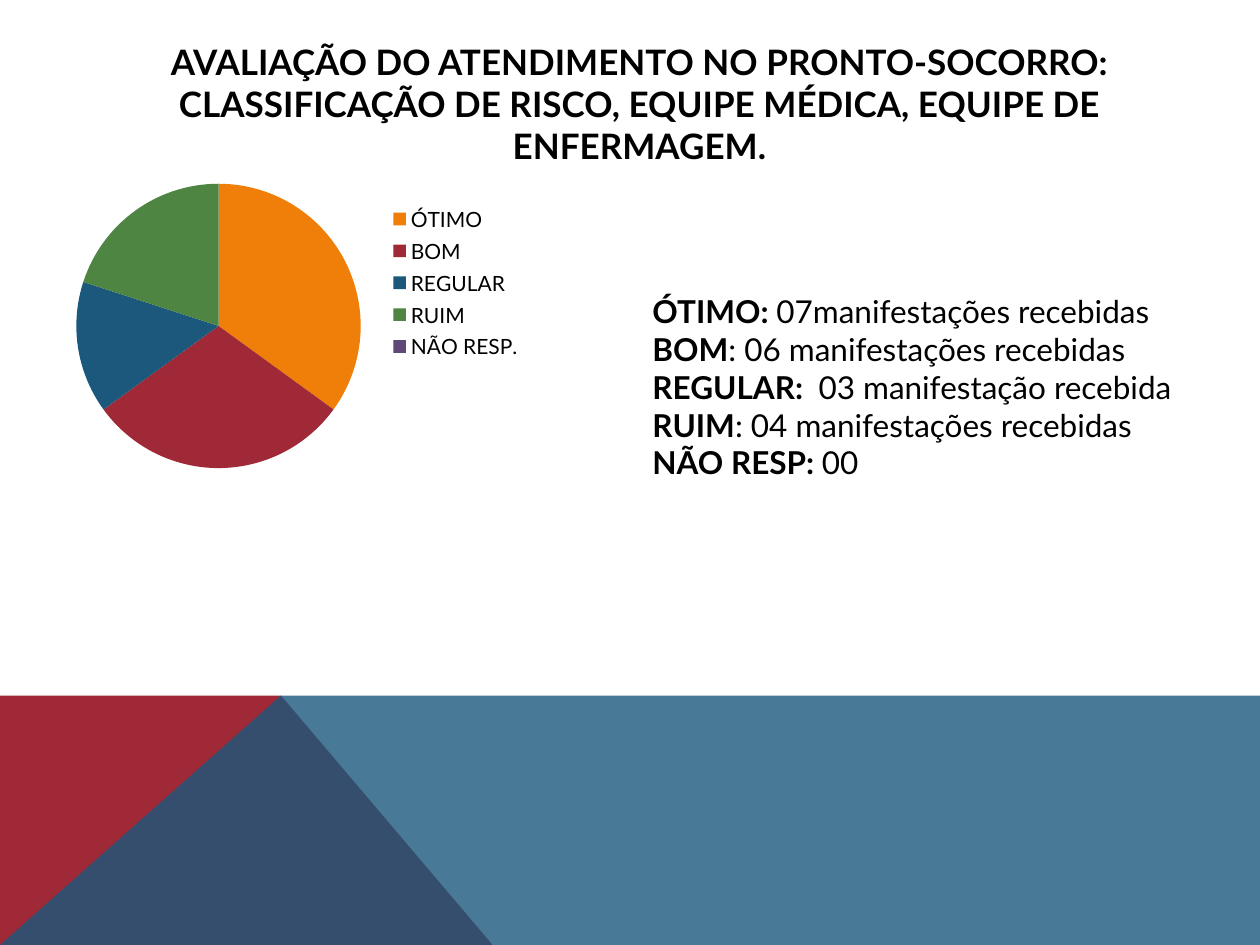
from lxml.etree import SubElement
from pptx import Presentation
from pptx.chart.data import CategoryChartData
from pptx.dml.color import RGBColor
from pptx.enum.chart import XL_CHART_TYPE, XL_LEGEND_POSITION
from pptx.enum.text import MSO_ANCHOR, PP_ALIGN
from pptx.oxml.ns import qn
from pptx.util import Inches, Pt

FONT = "Lato"
BLACK = RGBColor(0x00, 0x00, 0x00)
WHITE = RGBColor(0xFF, 0xFF, 0xFF)
ORANGE = RGBColor(0xF0, 0x7F, 0x09)
RED = RGBColor(0x9F, 0x29, 0x36)
BLUE = RGBColor(0x1B, 0x58, 0x7C)
GREEN = RGBColor(0x4E, 0x85, 0x42)
PURPLE = RGBColor(0x60, 0x48, 0x78)

TITLE = ("AVALIAÇÃO DO ATENDIMENTO NO PRONTO-SOCORRO: CLASSIFICAÇÃO DE RISCO, "
         "EQUIPE MÉDICA, EQUIPE DE ENFERMAGEM.")
RATINGS = [
    ("ÓTIMO", 35, ORANGE),
    ("BOM", 30, RED),
    ("REGULAR", 15, BLUE),
    ("RUIM", 20, GREEN),
    ("NÃO RESP.", 0, PURPLE),
]
COUNTS = [
    ("ÓTIMO: ", "07manifestações recebidas"),
    ("BOM", ": 06 manifestações recebidas"),
    ("REGULAR:  ", "03 manifestação recebida"),
    ("RUIM", ": 04 manifestações recebidas"),
    ("NÃO RESP: ", "00"),
]


def style_font(font, size, bold=False):
    font.name = FONT
    font.size = Pt(size)
    font.bold = bold
    font.color.rgb = BLACK


def add_polygon(s, points, color, opacity=100):
    corners = [(Inches(x), Inches(y)) for x, y in points]
    builder = s.shapes.build_freeform(*corners[0])
    builder.add_line_segments(corners[1:], close=True)
    sp = builder.convert_to_shape()
    sp.shadow.inherit = False
    sp.line.fill.background()
    sp.fill.solid()
    sp.fill.fore_color.rgb = color
    if opacity < 100:
        srgb = sp.fill._xPr.find(".//" + qn("a:srgbClr"))
        SubElement(srgb, qn("a:alpha"), val=str(opacity * 1000))


def add_footer(s, left, top, width, height):
    right, bottom, peak = left + width, top + height, left + 2.23
    add_polygon(s, [(left, bottom), (left, top), (peak, top),
                    (left + 3.91, bottom)], RED)
    add_polygon(s, [(left, bottom), (peak, top), (right, top),
                    (right, bottom)], BLUE, 80)


def add_text_box(s, left, top, width, height):
    box = s.shapes.add_textbox(Inches(left), Inches(top), Inches(width), Inches(height))
    tf = box.text_frame
    tf.word_wrap = True
    return tf


def add_title(s, left, top, width, height):
    tf = add_text_box(s, left, top, width, height)
    tf.vertical_anchor = MSO_ANCHOR.MIDDLE
    tf.text = TITLE
    p = tf.paragraphs[0]
    p.alignment = PP_ALIGN.CENTER
    style_font(p.runs[0].font, 20, True)


def place_part(part, **position):
    layout = part.find(qn("c:layout"))
    if layout is None:
        layout = part.makeelement(qn("c:layout"), {})
        part.find(qn("c:overlay")).addprevious(layout)
    manual = SubElement(layout, qn("c:manualLayout"))
    for tag, value in position.items():
        SubElement(manual, qn("c:" + tag), val=str(value))


def add_pie(s, left, top, width, height):
    data = CategoryChartData()
    data.categories = [name for name, _, _ in RATINGS]
    data.add_series("Series 1", [value for _, value, _ in RATINGS])
    chart = s.shapes.add_chart(XL_CHART_TYPE.PIE, Inches(left), Inches(top),
                               Inches(width), Inches(height), data).chart
    style_font(chart.font, 18)
    chart.has_title = False
    chart.has_legend = True
    legend = chart.legend
    legend.position = XL_LEGEND_POSITION.RIGHT
    legend.include_in_layout = True
    style_font(legend.font, 12)
    plot = chart.plots[0]
    plot.vary_by_categories = True
    for i, (_, _, color) in enumerate(RATINGS):
        fill = plot.series[0].points[i].format.fill
        fill.solid()
        fill.fore_color.rgb = color
    area = chart._chartSpace.chart.plotArea
    if area.find(qn("c:layout")) is None:
        area.insert(0, area.makeelement(qn("c:layout"), {}))
    place_part(area, layoutTarget="inner", xMode="edge", yMode="edge",
               x=0.09, y=0.05, w=0.54, h=0.89)
    place_part(legend._element, xMode="edge", yMode="edge",
               x=0.64, y=0.1, w=0.34, h=0.52)


def add_counts(s, left, top, width, height):
    tf = add_text_box(s, left, top, width, height)
    for i, (label, count) in enumerate(COUNTS):
        p = tf.paragraphs[0] if i == 0 else tf.add_paragraph()
        for text, bold in ((label, True), (count, False)):
            r = p.add_run()
            r.text = text
            style_font(r.font, 18, bold)


def main():
    prs = Presentation()
    prs.slide_width, prs.slide_height = Inches(10), Inches(7.5)
    s = prs.slides.add_slide(prs.slide_layouts[6])
    s.background.fill.solid()
    s.background.fill.fore_color.rgb = WHITE
    add_footer(s, 0, 5.52, 10, 1.98)
    add_title(s, 0.62, 0.4, 8.91, 0.85)
    add_pie(s, 0.23, 1.33, 4.18, 2.54)
    add_counts(s, 5.08, 2.27, 4.45, 1.92)
    prs.save("out.pptx")


if __name__ == "__main__":
    main()
